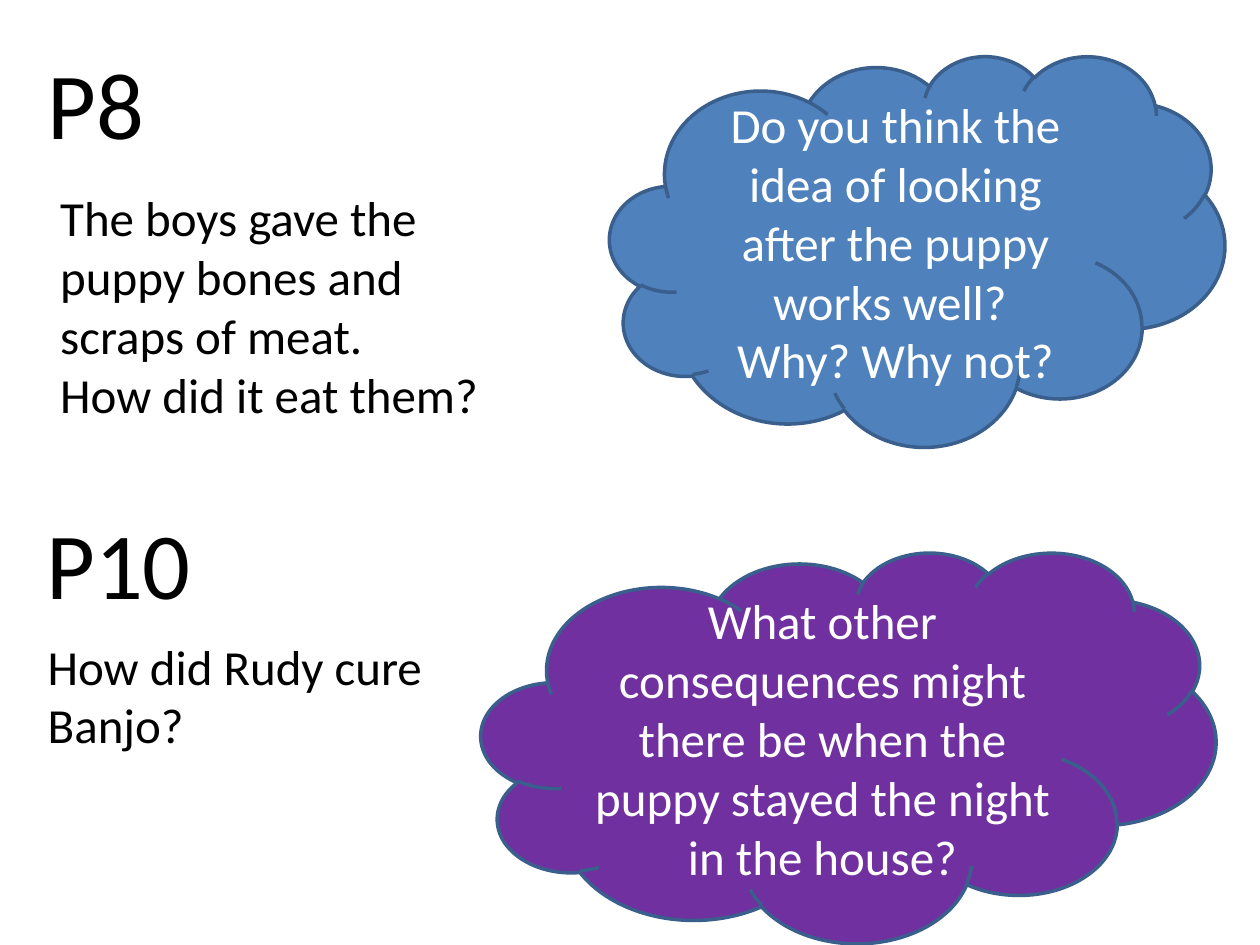
from pptx import Presentation
from pptx.dml.color import RGBColor
from pptx.enum.shapes import MSO_SHAPE as Shape
from pptx.enum.text import MSO_ANCHOR as Anchor, MSO_AUTO_SIZE as AutoSize, PP_ALIGN as Align
from pptx.util import Inches, Pt

COLUMNS, ROWS = 100, 75


def color(value):
    """Turn a hex string into a colour."""
    return RGBColor.from_string(value)


class Page:
    """Hold the style and the current slide, placing elements by grid columns and rows."""

    font, ink, paper, outline = "Calibri", "000000", "FFFFFF", "3A5F8C"
    heading_size, body_size = 54, 28

    def __init__(self, prs):
        """Add a blank slide to the presentation."""
        self.prs = prs
        self.s = prs.slides.add_slide(prs.slide_layouts[6])

    def place(self, column, row, columns, rows):
        """Convert grid units to slide lengths."""
        x, y = self.prs.slide_width / COLUMNS, self.prs.slide_height / ROWS
        return [round(n) for n in (column * x, row * y, columns * x, rows * y)]

    def fill_text(self, tf, lines, size, ink, align):
        """Fill a text frame with one paragraph per line."""
        tf.text = "\n".join(lines)
        for p in tf.paragraphs:
            p.alignment = align
            p.font.name, p.font.size = self.font, Pt(size)
            p.font.color.rgb = color(ink)

    def text(self, box, lines, size, wrap):
        """Add a text box that grows with its text."""
        tf = self.s.shapes.add_textbox(*self.place(*box)).text_frame
        tf.word_wrap = wrap
        tf.auto_size = AutoSize.SHAPE_TO_FIT_TEXT
        self.fill_text(tf, lines, size, self.ink, Align.LEFT)

    def heading(self, box, label):
        """Add a page number heading."""
        self.text(box, [label], self.heading_size, False)

    def question(self, box, *lines):
        """Add a wrapped reading question."""
        self.text(box, lines, self.body_size, True)

    def cloud(self, box, fill, *lines):
        """Add a thought cloud with centred text."""
        sp = self.s.shapes.add_shape(Shape.CLOUD, *self.place(*box))
        sp.shadow.inherit = False
        sp.fill.solid()
        sp.fill.fore_color.rgb = color(fill)
        sp.line.color.rgb = color(self.outline)
        sp.line.width = Pt(2)
        tf = sp.text_frame
        tf.word_wrap = True
        tf.vertical_anchor = Anchor.MIDDLE
        self.fill_text(tf, lines, self.body_size, self.paper, Align.CENTER)


def main():
    """Build the reading questions slide."""
    prs = Presentation()
    prs.slide_width, prs.slide_height = Inches(10), Inches(7.5)
    page = Page(prs)
    page.heading((2.8, 3.1, 9.8, 10.1), "P8")
    page.question((3.8, 14.4, 39.4, 19.9),
                  "The boys gave the puppy bones and scraps of meat.",
                  "How did it eat them?")
    page.heading((2.7, 39.6, 13.6, 10.1), "P10")
    page.question((2.8, 50, 32.8, 10.4), "How did Rudy cure Banjo?")
    page.cloud((48.4, 4.4, 48.8, 31), "4F81BD",
               "Do you think the idea of looking after the puppy works well? ",
               "Why? Why not?")
    page.cloud((38.2, 43.8, 58.3, 31), "7030A0",
               "What other consequences might there be when the puppy "
               "stayed the night in the house?")
    prs.save("out.pptx")


if __name__ == "__main__":
    main()
